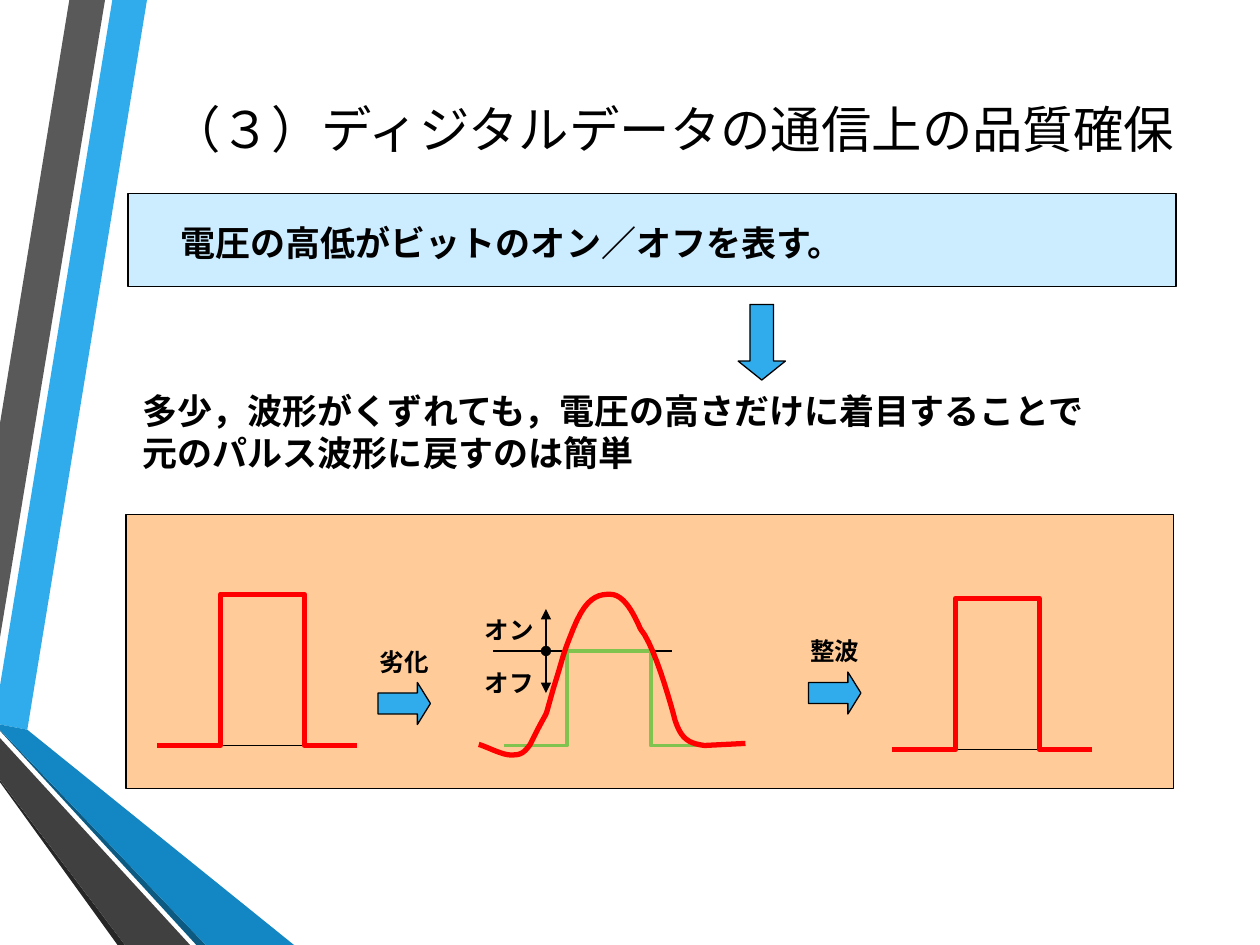
from dataclasses import dataclass

from lxml.etree import SubElement
from pptx import Presentation
from pptx.dml.color import RGBColor
from pptx.enum.lang import MSO_LANGUAGE_ID as Lang
from pptx.enum.shapes import MSO_CONNECTOR as Line, MSO_SHAPE as Shape
from pptx.enum.text import MSO_ANCHOR as Anchor, PP_ALIGN as Align
from pptx.oxml.ns import qn
from pptx.util import Inches, Pt


@dataclass(frozen=True)
class Theme:
    """Colours, fonts, type sizes and line widths of the slide."""
    ink: str = "000000"
    blue: str = "30ACEC"
    mid_blue: str = "1287C3"
    deep_blue: str = "0C5A82"
    grey: str = "595959"
    dark_grey: str = "404040"
    black_grey: str = "262626"
    panel: str = "FFCC99"
    banner: str = "CCECFF"
    signal: str = "FF0000"
    ideal: str = "80C34F"
    sans: str = "Calibri"
    serif: str = "Times New Roman"
    title: float = 28.8
    body: float = 20
    label: float = 14
    thin: float = 0.75
    medium: float = 2.25
    thick: float = 3


T = Theme()
COLS, ROWS = 120, 90
WIDTH, HEIGHT = Inches(10), Inches(7.5)

BANDS = [
    (T.blue, [(0, 65.3), (0, 69), (2.6, 69.5), (14, 0), (10.7, 0)]),
    (T.grey, [(10, 0), (6.6, 0), (0, 40.3), (0, 60.7)]),
    (T.black_grey, [(0, 74.3), (0, 74.5), (11.2, 90), (11.9, 90)]),
    (T.deep_blue, [(0, 69.5), (0, 69.6), (18.7, 90), (19.6, 90)]),
    (T.mid_blue, [(0, 69.5), (19.6, 90), (28, 90), (2.6, 69.5), (0, 69)]),
    (T.dark_grey, [(0, 74.3), (11.9, 90), (18.1, 90), (0, 70.3)]),
]
WAVE_START, WAVE_END = (45.6, 70.9), (71, 70.8)
WAVE_CURVES = [
    ((46.1, 71), (47.8, 71.9), (48.6, 71.9)),
    ((49.4, 71.9), (49.8, 71.9), (50.5, 70.9)),
    ((52.6, 66.6), (51.6, 69.4), (52.7, 65.6)),
    ((53.9, 61.8), (53.4, 62.9), (54.6, 59.9)),
    ((55.8, 56.9), (56.9, 56.6), (58.1, 56.6)),
    ((59.2, 56.6), (60.1, 57.8), (61, 59.9)),
    ((62.3, 61.4), (63.8, 66.7), (64.3, 68.6)),
    ((64.9, 70.4), (65.6, 70.8), (67.1, 71)),
]


def at(col, row):
    """Turn a grid position or size into slide lengths."""
    return round(WIDTH * col / COLS), round(HEIGHT * row / ROWS)


def paint(sp, fill=None, line=None, width=T.thin):
    """Set the fill and outline of a shape and drop its shadow."""
    sp.shadow.inherit = False
    for format_, color in ((sp.fill, fill), (sp.line.fill, line)):
        if color:
            format_.solid()
            format_.fore_color.rgb = RGBColor.from_string(color)
        else:
            format_.background()
    if line:
        sp.line.width = Pt(width)


def add_text(slide, text, col, row, cols, rows, size=T.label, font=T.serif,
             bold=True, align=Align.LEFT, anchor=Anchor.TOP):
    """Add a text box with one paragraph for each line of text."""
    tf = slide.shapes.add_textbox(*at(col, row), *at(cols, rows)).text_frame
    tf.word_wrap = True
    tf.vertical_anchor = anchor
    for i, words in enumerate(text.split("\n")):
        p = tf.add_paragraph() if i else tf.paragraphs[0]
        p.alignment = align
        r = p.add_run()
        r.text = words
        r.font.name, r.font.size, r.font.bold = font, Pt(size), bold
        r.font.language_id = Lang.JAPANESE
        r.font.color.rgb = RGBColor.from_string(T.ink)


def add_preset(slide, kind, col, row, cols, rows, fill, adjust=()):
    """Add an outlined preset shape."""
    sp = slide.shapes.add_shape(kind, *at(col, row), *at(cols, rows))
    for i, value in enumerate(adjust):
        sp.adjustments[i] = value
    paint(sp, fill, T.ink)


def add_path(slide, points, close=False, **style):
    """Add a freeform through grid points."""
    start, *rest = [at(*point) for point in points]
    builder = slide.shapes.build_freeform(*start)
    builder.add_line_segments(rest, close=close)
    paint(builder.convert_to_shape(), **style)


def add_line(slide, start, end, head=None, tail=None):
    """Add a thin straight line with optional end marks."""
    sp = slide.shapes.add_connector(Line.STRAIGHT, *at(*start), *at(*end))
    sp.line.width = Pt(T.thin)
    sp.line.color.rgb = RGBColor.from_string(T.ink)
    ln = sp.line._get_or_add_ln()
    for tag, mark in (("a:headEnd", head), ("a:tailEnd", tail)):
        if mark:
            SubElement(ln, qn(tag), type=mark)
    SubElement(sp._element.spPr, qn("a:effectLst"))


def pulse(col, base, top, lead=6, end=19):
    """Return the grid points of a square pulse."""
    up, down = col + lead, col + lead + 8
    return [(col, base), (up, base), (up, top),
            (down, top), (down, base), (col + end, base)]


def add_pulse(slide, col, base, height=14.4):
    """Add a clean red pulse over its thin base line."""
    add_line(slide, (col, base), (col + 19, base))
    add_path(slide, pulse(col, base, base - height),
             line=T.signal, width=T.thick)


def wave_points(steps=10):
    """Sample the cubic curves of the distorted wave."""
    points = [WAVE_START]
    for curve in WAVE_CURVES:
        knots = (points[-1], *curve)
        for t in (i / steps for i in range(1, steps + 1)):
            weights = ((1 - t) ** 3, 3 * t * (1 - t) ** 2,
                       3 * t ** 2 * (1 - t), t ** 3)
            points.append(tuple(sum(w * k[axis] for w, k in zip(weights, knots))
                                for axis in (0, 1)))
    return points + [WAVE_END]


def add_step(slide, text, col, row):
    """Add a label above a right arrow."""
    add_text(slide, text, col, row, 9, 5)
    add_preset(slide, Shape.RIGHT_ARROW, col + 1, row + 4, 5, 4,
               T.blue, (0.5, 0.31))


def add_threshold(slide):
    """Add the on and off marks, the ideal pulse and the distorted wave."""
    add_line(slide, (47, 62), (64, 62))
    add_path(slide, pulse(48, 71, 62), line=T.ideal, width=T.medium)
    add_path(slide, wave_points(), line=T.signal, width=T.thick)
    add_line(slide, (52, 62), (52, 58), tail="triangle")
    add_line(slide, (52, 62), (52, 66), head="oval", tail="triangle")
    for text, row in (("オン", 58), ("オフ", 63)):
        add_text(slide, text, 45, row, 9, 5)


def main():
    """Build the slide and save it."""
    prs = Presentation()
    prs.slide_width, prs.slide_height = WIDTH, HEIGHT
    slide = prs.slides.add_slide(prs.slide_layouts[6])
    for color, points in BANDS:
        add_path(slide, points, close=True, fill=color)
    add_preset(slide, Shape.RECTANGLE, 12, 49, 99.8, 26.1, T.panel)
    add_preset(slide, Shape.RECTANGLE, 12.2, 18.4, 99.8, 8.9, T.banner)
    add_text(slide, "（３）ディジタルデータの通信上の品質確保", 11, 5.5, 102, 13.4,
             size=T.title, font=T.sans, bold=False,
             align=Align.RIGHT, anchor=Anchor.MIDDLE)
    add_text(slide, "電圧の高低がビットのオン／オフを表す。", 16, 19.8, 66.6, 6.6,
             size=T.body, font=T.sans, anchor=Anchor.MIDDLE)
    add_text(slide, "多少，波形がくずれても，電圧の高さだけに着目することで\n"
             "元のパルス波形に戻すのは簡単", 12.4, 36.5, 97.3, 13, size=T.body)
    add_preset(slide, Shape.DOWN_ARROW, 70.3, 29, 4.5, 7.2, T.blue, (0.5, 0.4))
    add_pulse(slide, 15, 71)
    add_pulse(slide, 85, 71.4)
    add_threshold(slide)
    add_step(slide, "劣化", 35, 61)
    add_step(slide, "整波", 76, 60)
    prs.save("out.pptx")


if __name__ == "__main__":
    main()
